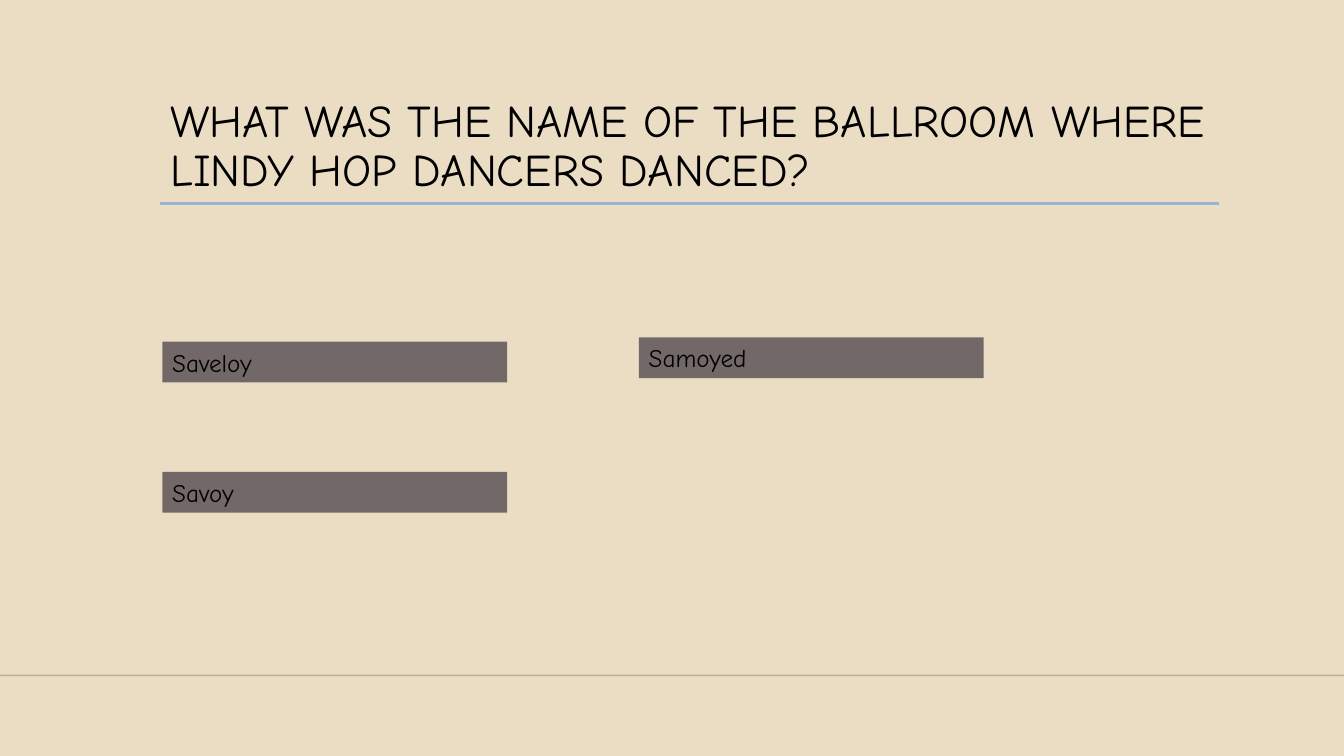
from lxml import etree
from pptx import Presentation
from pptx import util as u
from pptx.dml.color import RGBColor
from pptx.enum import shapes, text
from pptx.oxml.ns import qn

WIDTH, HEIGHT = 33.87, 19.05
COLORS = {
    "paper": "EBDDC3",
    "ink": "000000",
    "floor": "000001",
    "rule": "94B6D2",
    "answer": "726868",
}


class QuizSlide:
    font = "Comic Neue"

    def __init__(self, prs):
        self.s = prs.slides.add_slide(prs.slide_layouts[5])
        fill = self.s.background.fill
        fill.solid()
        fill.fore_color.rgb = self.color("paper")

    def color(self, name):
        return RGBColor.from_string(COLORS[name])

    def set_text(self, tf, words, size):
        tf.word_wrap = True
        tf.vertical_anchor = text.MSO_ANCHOR.MIDDLE
        p = tf.paragraphs[0]
        p.text = words
        p.alignment = text.PP_ALIGN.LEFT
        p.font.name = self.font
        p.font.size = u.Pt(size)
        p.font.color.rgb = self.color("ink")
        return p

    def title(self, words, left, top, width, height):
        sp = self.s.shapes.title
        sp.left, sp.top, sp.width, sp.height = map(u.Cm, (left, top, width, height))
        sp.text_frame.auto_size = text.MSO_AUTO_SIZE.NONE
        self.set_text(sp.text_frame, words, 32.4).line_spacing = 0.9

    def rule(self, left, right, y, color, weight, opacity=100):
        """Draw a horizontal line; opacity is in percent."""
        ln = self.s.shapes.add_connector(
            shapes.MSO_CONNECTOR.STRAIGHT, u.Cm(left), u.Cm(y), u.Cm(right), u.Cm(y))
        ln.line.color.rgb = self.color(color)
        ln.line.width = u.Pt(weight)
        sp_pr = ln._element.spPr
        if opacity < 100:
            alpha = etree.SubElement(next(sp_pr.iter(qn("a:srgbClr"))), qn("a:alpha"))
            alpha.set("val", str(opacity * 1000))
        etree.SubElement(sp_pr, qn("a:effectLst"))

    def answer(self, words, left, top):
        sp = self.s.shapes.add_shape(
            shapes.MSO_SHAPE.RECTANGLE, u.Cm(left), u.Cm(top), u.Cm(8.69), u.Cm(1.03))
        sp.shadow.inherit = False
        sp.fill.solid()
        sp.fill.fore_color.rgb = self.color("answer")
        sp.line.fill.background()
        self.set_text(sp.text_frame, words, 18)
        sp.text_frame.auto_size = text.MSO_AUTO_SIZE.SHAPE_TO_FIT_TEXT


def main():
    prs = Presentation()
    prs.slide_width, prs.slide_height = u.Cm(WIDTH), u.Cm(HEIGHT)

    quiz = QuizSlide(prs)
    quiz.rule(0, WIDTH, 17.02, "floor", 1, opacity=20)
    quiz.rule(4.04, 30.73, 5.13, "rule", 2.5)
    quiz.title("WHAT WAS THE NAME OF THE BALLROOM WHERE LINDY HOP DANCERS DANCED?",
               4.04, 2.24, 26.67, 2.92)
    for words, left, top in (("Savoy", 4.09, 11.89),
                             ("Saveloy", 4.09, 8.61),
                             ("Samoyed", 16.1, 8.5)):
        quiz.answer(words, left, top)

    prs.save("out.pptx")


if __name__ == "__main__":
    main()
